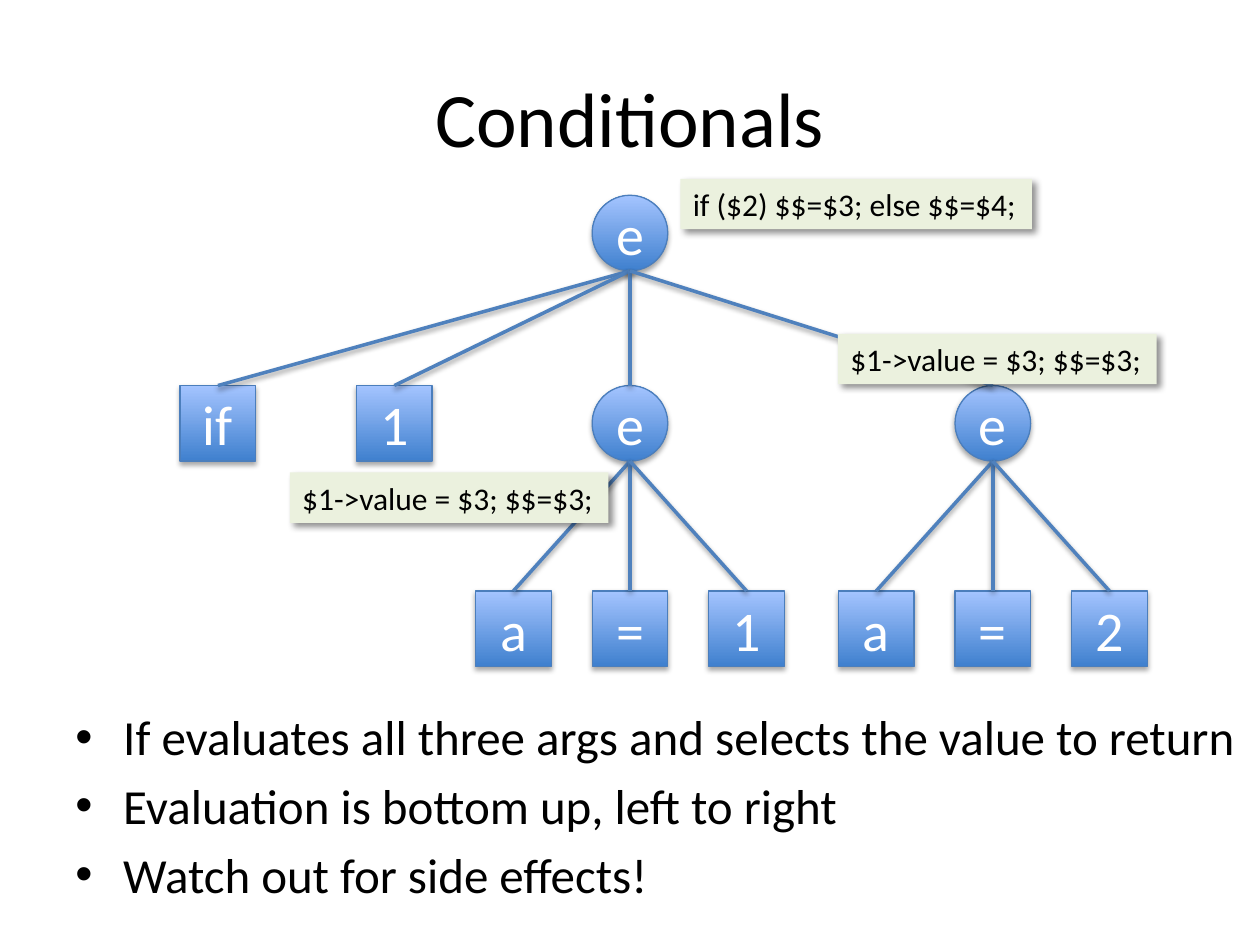
import pptx
import pptx.dml.color
import pptx.enum.shapes
import pptx.enum.text
import pptx.oxml
import pptx.oxml.ns
import pptx.util

COLORS = {
    "text": "000000", "node text": "FFFFFF", "node bottom": "3F80CE",
    "node top": "A4C4FF", "outline": "4B7EBC", "edge": "4F81BD",
    "label": "EBF1DE",
}
# opacity %, blur pt, distance pt, direction in degrees
SHADOWS = {"node": (35, 3.1, 1.8, 90), "edge": (38, 3.1, 1.6, 90),
           "label": (43, 4, 3, 45)}
COLUMNS, ROWS = 100, 75
NODE_SIZE = 6
LEVEL_TOPS = (15.5, 30.6, 46.9)
LEAF_GAP = 9.25
SHAPES = pptx.enum.shapes.MSO_SHAPE
ANCHOR = pptx.enum.text.MSO_ANCHOR
CENTER = pptx.enum.text.PP_ALIGN.CENTER
NO_INSETS = dict.fromkeys(
    ("margin_left", "margin_top", "margin_right", "margin_bottom"), 0)


def rgb(name):
    return pptx.dml.color.RGBColor.from_string(COLORS[name])


def drawing_element(tag, content="", **attributes):
    values = " ".join(f'{key}="{value}"' for key, value in attributes.items())
    namespace = pptx.oxml.ns.nsdecls("a")
    return pptx.oxml.parse_xml(
        f"<a:{tag} {namespace} {values}>{content}</a:{tag}>")


class TreeSlide:
    """Places elements on a grid of COLUMNS by ROWS in one shared style."""

    font = "Calibri"

    def __init__(self, deck):
        self.slide = deck.slides.add_slide(deck.slide_layouts[6])
        self.column = deck.slide_width / COLUMNS
        self.row = deck.slide_height / ROWS

    def place(self, x, y, *more):
        """Turn alternating columns and rows into slide lengths."""
        return [round(value * (self.row if i % 2 else self.column))
                for i, value in enumerate((x, y, *more))]

    def set_text(self, shape, lines, size, color="text", align=None, **frame_format):
        frame = shape.text_frame
        for name, value in frame_format.items():
            setattr(frame, name, value)
        frame.text = "\n".join(lines)
        for paragraph in frame.paragraphs:
            paragraph.alignment = align
            font = paragraph.runs[0].font
            for name, value in {"name": self.font,
                                "size": pptx.util.Pt(size)}.items():
                setattr(font, name, value)
            font.color.rgb = rgb(color)
        return frame.paragraphs

    def cast_shadow(self, properties, kind):
        opacity, blur, distance, direction = SHADOWS[kind]
        effects = properties.find(pptx.oxml.ns.qn("a:effectLst"))
        if effects is None:
            effects = drawing_element("effectLst")
            properties.append(effects)
        effects.append(drawing_element(
            "outerShdw",
            f'<a:srgbClr val="000000"><a:alpha val="{opacity * 1000}"/></a:srgbClr>',
            blurRad=pptx.util.Pt(blur), dist=pptx.util.Pt(distance),
            dir=direction * 60000, rotWithShape=0))

    def title(self, text, *box):
        heading = self.slide.shapes.add_textbox(*self.place(*box))
        self.set_text(heading, [text], 44, align=CENTER, word_wrap=True,
                      vertical_anchor=ANCHOR.MIDDLE)

    def bullets(self, lines, *box):
        body = self.slide.shapes.add_textbox(*self.place(*box))
        indent = pptx.util.Inches(0.38)
        for paragraph in self.set_text(body, lines, 28, word_wrap=True):
            paragraph.space_before = pptx.util.Pt(5.6)
            properties = paragraph._p.get_or_add_pPr()
            for name, value in {"marL": indent, "indent": -indent}.items():
                properties.set(name, str(value))
            properties.append(drawing_element("buFont", typeface="Arial"))
            properties.append(drawing_element("buChar", char="•"))

    def node(self, text, center, top, kind):
        node = self.slide.shapes.add_shape(kind, *self.place(
            center - NODE_SIZE / 2, top, NODE_SIZE, NODE_SIZE))
        node.fill.gradient()
        node.fill.gradient_angle = 90
        for stop, name in zip(node.fill.gradient_stops,
                              ("node bottom", "node top")):
            stop.color.rgb = rgb(name)
        node.line.color.rgb = rgb("outline")
        node.line.width = pptx.util.Pt(0.75)
        node.shadow.inherit = False
        self.cast_shadow(node._element.spPr, "node")
        self.set_text(node, [text], 32, "node text", CENTER,
                      vertical_anchor=ANCHOR.MIDDLE, **NO_INSETS)

    def edge(self, *ends):
        edge = self.slide.shapes.add_connector(
            pptx.enum.shapes.MSO_CONNECTOR.STRAIGHT, *self.place(*ends))
        edge.line.color.rgb = rgb("edge")
        edge.line.width = pptx.util.Pt(2)
        self.cast_shadow(edge._element.spPr, "edge")

    def tree(self, text, center, children=(), level=0):
        """Draw a node, its subtrees and the edges down to them."""
        top = LEVEL_TOPS[level]
        self.node(text, center, top, SHAPES.OVAL if children else SHAPES.RECTANGLE)
        for child in children:
            self.tree(*child, level=level + 1)
            self.edge(center, top + NODE_SIZE, child[1], LEVEL_TOPS[level + 1])

    def label(self, text, left, top, width):
        label = self.slide.shapes.add_shape(
            SHAPES.RECTANGLE, *self.place(left, top, width, 4))
        label.fill.solid()
        label.fill.fore_color.rgb = rgb("label")
        label.line.fill.background()
        label.shadow.inherit = False
        self.cast_shadow(label._element.spPr, "label")
        self.set_text(label, [text], 18, align=pptx.enum.text.PP_ALIGN.LEFT,
                      word_wrap=False, vertical_anchor=ANCHOR.TOP,
                      auto_size=pptx.enum.text.MSO_AUTO_SIZE.SHAPE_TO_FIT_TEXT)


def assignment(center, value):
    leaves = [(text, center + step * LEAF_GAP)
              for step, text in zip((-1, 0, 1), ("a", "=", value))]
    return "e", center, leaves


def main():
    deck = pptx.Presentation()
    deck.slide_width = pptx.util.Inches(10)
    deck.slide_height = pptx.util.Inches(7.5)
    slide = TreeSlide(deck)

    slide.title("Conditionals", 5, 3, 90, 12.5)
    slide.bullets(["If evaluates all three args and selects the value to return",
                   "Evaluation is bottom up, left to right",
                   "Watch out for side effects!"], 5, 55.6, 95, 16.5)
    slide.tree("e", 50, [("if", 17.3), ("1", 31.3),
                         assignment(50, "1"), assignment(78.8, "2")])
    slide.label("if ($2) $$=$3; else $$=$4;", 54, 14.2, 27.9)
    for left, top in ((23, 37.5), (66.5, 26.5)):
        slide.label("$1->value = $3; $$=$3;", left, top, 25.3)

    deck.save("out.pptx")


if __name__ == "__main__":
    main()
